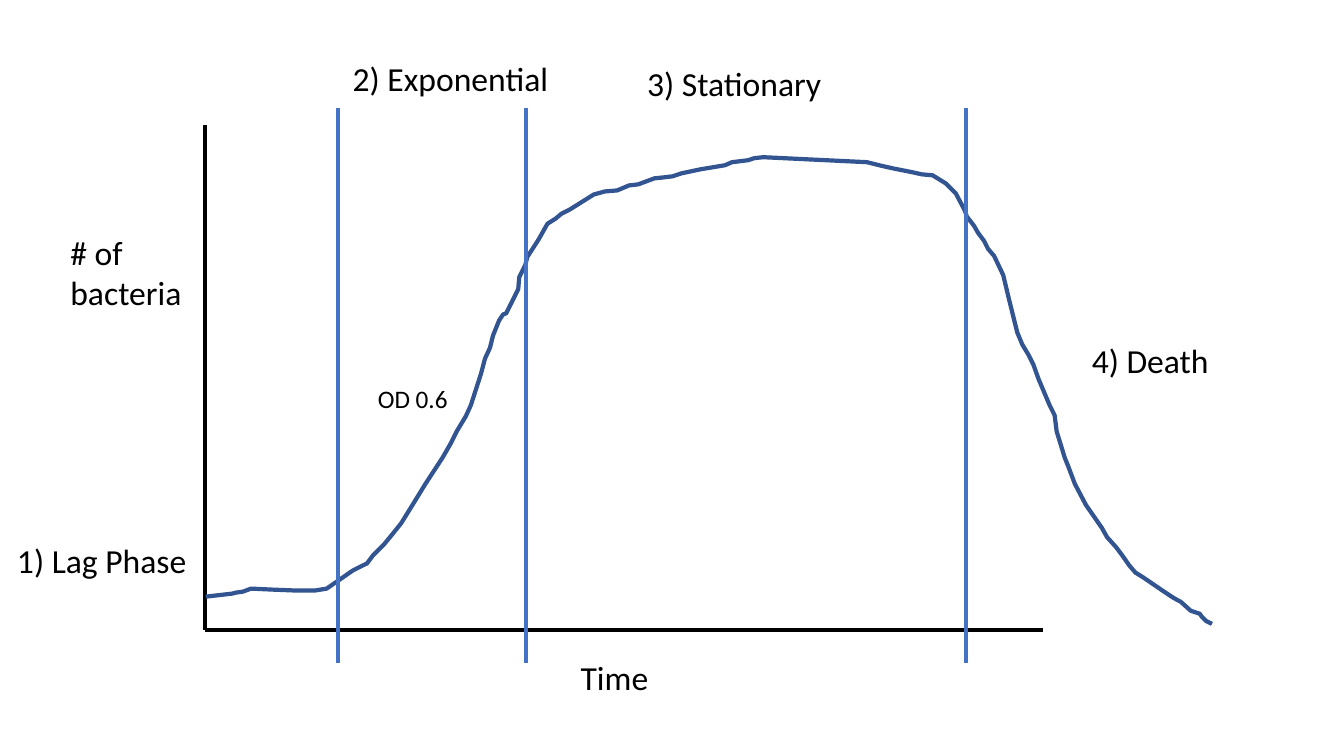
from pptx import Presentation
from pptx.dml.color import RGBColor
from pptx.enum.shapes import MSO_CONNECTOR
from pptx.enum.text import MSO_AUTO_SIZE
from pptx.oxml.ns import qn
from pptx.util import Emu, Pt
from lxml.etree import SubElement

PX = 9144  # EMU per px, 100 px to the inch
BLACK, BLUE, NAVY = "000000", "4472C4", "325491"


def color(code):
    return RGBColor.from_string(code)


def emu(*px):
    return [Emu(n * PX) for n in px]


def write(frame, text, size=24, font="Calibri", ink=BLACK, wrap=True):
    frame.word_wrap = wrap
    frame.auto_size = MSO_AUTO_SIZE.SHAPE_TO_FIT_TEXT
    run = frame.paragraphs[0].add_run()
    run.text = text
    run.font.size = Pt(size)
    run.font.name = font
    run.font.color.rgb = color(ink)


class Graph:
    def __init__(self, slide, width=3):
        self.shapes = slide.shapes
        self.width = Pt(width)

    def stroke(self, shape, ink):
        shape.line.color.rgb = color(ink)
        shape.line.width = self.width

    def line(self, x1, y1, x2, y2, ink):
        line = self.shapes.add_connector(
            MSO_CONNECTOR.STRAIGHT, *emu(x1, y1, x2, y2))
        self.stroke(line, ink)
        SubElement(line._element.spPr, qn("a:effectLst"))

    def curve(self, points, ink):
        pen = self.shapes.build_freeform(*points[0], scale=PX)
        pen.add_line_segments(points[1:], close=False)
        curve = pen.convert_to_shape()
        curve.shadow.inherit = False
        curve.fill.background()
        self.stroke(curve, ink)

    def label(self, text, x, y, w, h, **style):
        box = self.shapes.add_textbox(*emu(x, y, w, h))
        write(box.text_frame, text, **style)


GROWTH = [
    # Lag
    (204, 592), (230, 589), (234, 588), (241, 587), (249, 584), (270, 585),
    (295, 586), (312, 586), (324, 584), (337, 575), (350, 566), (364, 559),
    # Exponential
    (370, 551), (381, 540), (390, 529), (398, 519), (411, 498), (422, 480),
    (439, 454), (447, 440), (453, 428), (462, 413), (467, 402), (477, 371),
    (481, 356), (486, 345), (489, 333), (495, 318), (499, 312), (502, 311),
    (508, 299), (514, 287), (515, 275), (521, 263), (523, 255),
    # Stationary
    (534, 238), (543, 222), (551, 217), (557, 212), (565, 208), (581, 198),
    (589, 193), (600, 190), (612, 189), (624, 184), (633, 183), (649, 177),
    (659, 176), (667, 175), (676, 172), (695, 168), (719, 164), (726, 161),
    (742, 159), (748, 157), (757, 156), (860, 161), (872, 164), (885, 167),
    (905, 171), (914, 173), (925, 174), (938, 182), (948, 192), (957, 209),
    # Death
    (959, 215), (966, 224), (970, 231), (976, 239), (980, 247), (986, 254),
    (995, 273), (1001, 298), (1004, 310), (1009, 330), (1014, 342),
    (1020, 352), (1025, 362), (1030, 376), (1041, 402), (1046, 412),
    (1048, 428), (1056, 454), (1060, 464), (1066, 480), (1077, 501),
    (1093, 524), (1098, 533), (1107, 543), (1113, 551), (1120, 561),
    (1126, 568), (1134, 573), (1153, 586), (1162, 592), (1167, 595),
    (1171, 597), (1181, 606), (1190, 609), (1192, 612), (1196, 616),
    (1202, 619),
]


def main():
    deck = Presentation()
    deck.slide_width, deck.slide_height = emu(1333, 750)
    graph = Graph(deck.slides.add_slide(deck.slide_layouts[6]))

    # Axes and their titles
    graph.line(203, 124, 203, 625, BLACK)
    graph.line(1034, 625, 203, 625, BLACK)
    graph.label("Time", 566, 647, 88, 50, wrap=False)
    graph.label("# of bacteria", 60, 225, 144, 91)

    # Growth curve and the borders between phases
    graph.curve(GROWTH, NAVY)
    for x in (335, 522, 958):
        graph.line(x, 107, x, 658, BLUE)

    # Phase names
    for text, x, y in (("1) Lag Phase", 7, 531),
                       ("2) Exponential", 340, 53),
                       ("3) Stationary", 632, 58),
                       ("4) Death", 1073, 332)):
        graph.label(text, x, y, 219, 50)
    graph.label("OD 0.6", 365, 375, 94, 42, size=18)

    deck.save("out.pptx")


if __name__ == "__main__":
    main()
